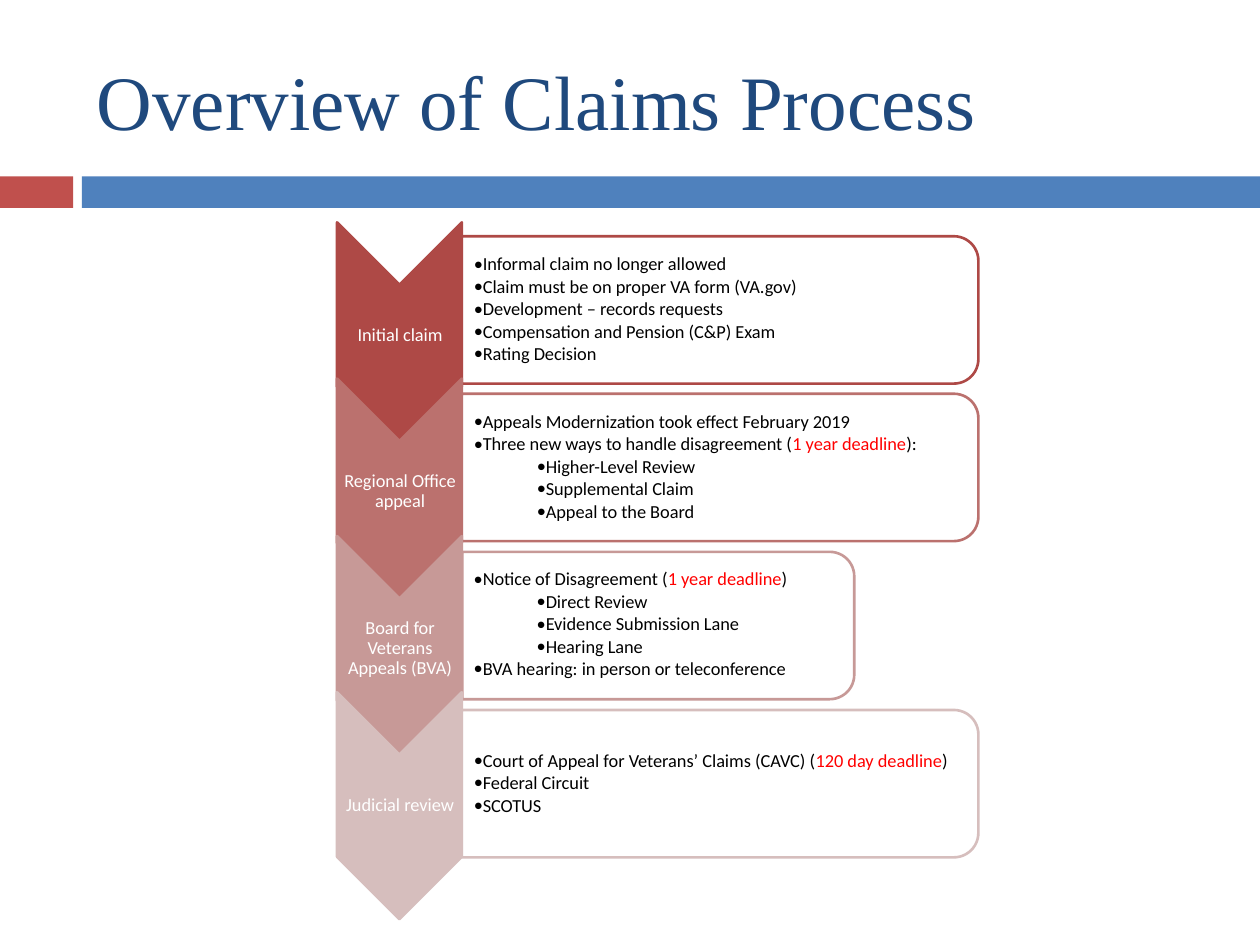
from lxml.etree import SubElement
from pptx import Presentation
from pptx.dml.color import RGBColor
from pptx.enum.shapes import MSO_SHAPE
from pptx.enum.text import MSO_ANCHOR, PP_ALIGN
from pptx.oxml.ns import qn
from pptx.util import Pt

PX = 9144  # EMU per px, 100 px to the inch

THEME = {
    "title": {"name": "Times New Roman", "size": Pt(44), "color": "1F497D"},
    "label": {"name": "Calibri", "size": Pt(10.5), "color": "FFFFFF"},
    "body": {"name": "Calibri", "size": Pt(10.5), "color": "000000"},
    "deadline": {"name": "Calibri", "size": Pt(10.5), "color": "FF0000"},
    "accent_bar": "C0504D",
    "main_bar": "4F81BD",
    "panel": "FFFFFF",
}

# Label, colour, panel width, bullets as (level, text); deadlines stand between bars
STAGES = [
    ("Initial claim", "AE4946", 410, [
        (1, "Informal claim no longer allowed"),
        (1, "Claim must be on proper VA form (VA.gov)"),
        (1, "Development – records requests"),
        (1, "Compensation and Pension (C&P) Exam"),
        (1, "Rating Decision"),
    ]),
    ("Regional Office appeal", "BB716E", 410, [
        (1, "Appeals Modernization took effect February 2019"),
        (1, "Three new ways to handle disagreement (|1 year deadline|):"),
        (2, "Higher-Level Review"),
        (2, "Supplemental Claim"),
        (2, "Appeal to the Board"),
    ]),
    ("Board for Veterans Appeals (BVA)", "C79997", 311, [
        (1, "Notice of Disagreement (|1 year deadline|)"),
        (2, "Direct Review"),
        (2, "Evidence Submission Lane"),
        (2, "Hearing Lane"),
        (1, "BVA hearing: in person or teleconference"),
    ]),
    ("Judicial review", "D6BEBD", 410, [
        (1, "Court of Appeal for Veterans’ Claims (CAVC) (|120 day deadline|)"),
        (1, "Federal Circuit"),
        (1, "SCOTUS"),
    ]),
]

presentation = Presentation()
presentation.slide_width = 1000 * PX
presentation.slide_height = 750 * PX
slide = presentation.slides.add_slide(presentation.slide_layouts[6])


def add_block(preset, box, fill, line=None, rotation=0):
    shape = slide.shapes.add_shape(preset, *(value * PX for value in box))
    shape.shadow.inherit = False
    shape.rotation = rotation
    shape.fill.solid()
    shape.fill.fore_color.rgb = RGBColor.from_string(fill)
    if line:
        shape.line.color.rgb = RGBColor.from_string(line)
        shape.line.width = Pt(1.5)
    else:
        shape.line.fill.background()
    return shape


def add_text(box, lines, style, frame_format, paragraph_format):
    frame = slide.shapes.add_textbox(*(value * PX for value in box)).text_frame
    frame_format = {"word_wrap": True, "vertical_anchor": MSO_ANCHOR.MIDDLE, **frame_format}
    for name, value in frame_format.items():
        setattr(frame, name, value)
    for index, (level, text) in enumerate(lines):
        paragraph = frame.add_paragraph() if index else frame.paragraphs[0]
        for name, value in {"level": level, **paragraph_format}.items():
            setattr(paragraph, name, value)
        if level:
            properties = paragraph._p.get_or_add_pPr()
            properties.set("marL", str((6 + 50 * (level - 1)) * PX))
            properties.set("indent", str(-6 * PX))
            SubElement(properties, qn("a:buFont"), typeface=THEME[style]["name"])
            SubElement(properties, qn("a:buChar"), char="•")
        for part, words in enumerate(text.split("|")):
            run = paragraph.add_run()
            run.text = words
            font = THEME["deadline" if part % 2 else style]
            run.font.name = font["name"]
            run.font.size = font["size"]
            run.font.color.rgb = RGBColor.from_string(font["color"])


# Title and the divider bars
add_block(MSO_SHAPE.RECTANGLE, (0, 140, 58, 25), THEME["accent_bar"])
add_block(MSO_SHAPE.RECTANGLE, (65, 140, 935, 25), THEME["main_bar"])
add_text((67, 25, 892, 108), [(0, "Overview of Claims Process")], "title", {}, {})

# Stages: a downward chevron with its label, and a panel of bullets
narrow = {f"margin_{side}": PX for side in ("left", "top", "right", "bottom")}
panel_left, panel_height = 367, 117
for index, (label, color, panel_width, bullets) in enumerate(STAGES):
    chevron_top = 217 + 249 * index // 2
    panel_middle = 246 + 376 * index // 3

    add_block(MSO_SHAPE.CHEVRON, (227, chevron_top, 180, 99), color, color, 90)
    add_text((268, chevron_top + 22, 99, 54), [(0, label)], "label", narrow,
             {"alignment": PP_ALIGN.CENTER, "line_spacing": 0.9})

    # The panel is turned a quarter, so its sides swap about its centre
    panel_box = (panel_left + (panel_width - panel_height) // 2,
                 panel_middle - panel_width // 2, panel_height, panel_width)
    panel = add_block(MSO_SHAPE.ROUND_2_SAME_RECTANGLE, panel_box,
                      THEME["panel"], color, 90)
    panel_color = panel._element.spPr.find(qn("a:solidFill"))[0]
    SubElement(panel_color, qn("a:alpha"), val="90000")
    add_text((panel_left, panel_middle - 53, panel_width - 5, 106), bullets, "body",
             {**narrow, "margin_left": 9 * PX},
             {"line_spacing": 0.9, "space_after": Pt(1.5)})

presentation.save("out.pptx")
